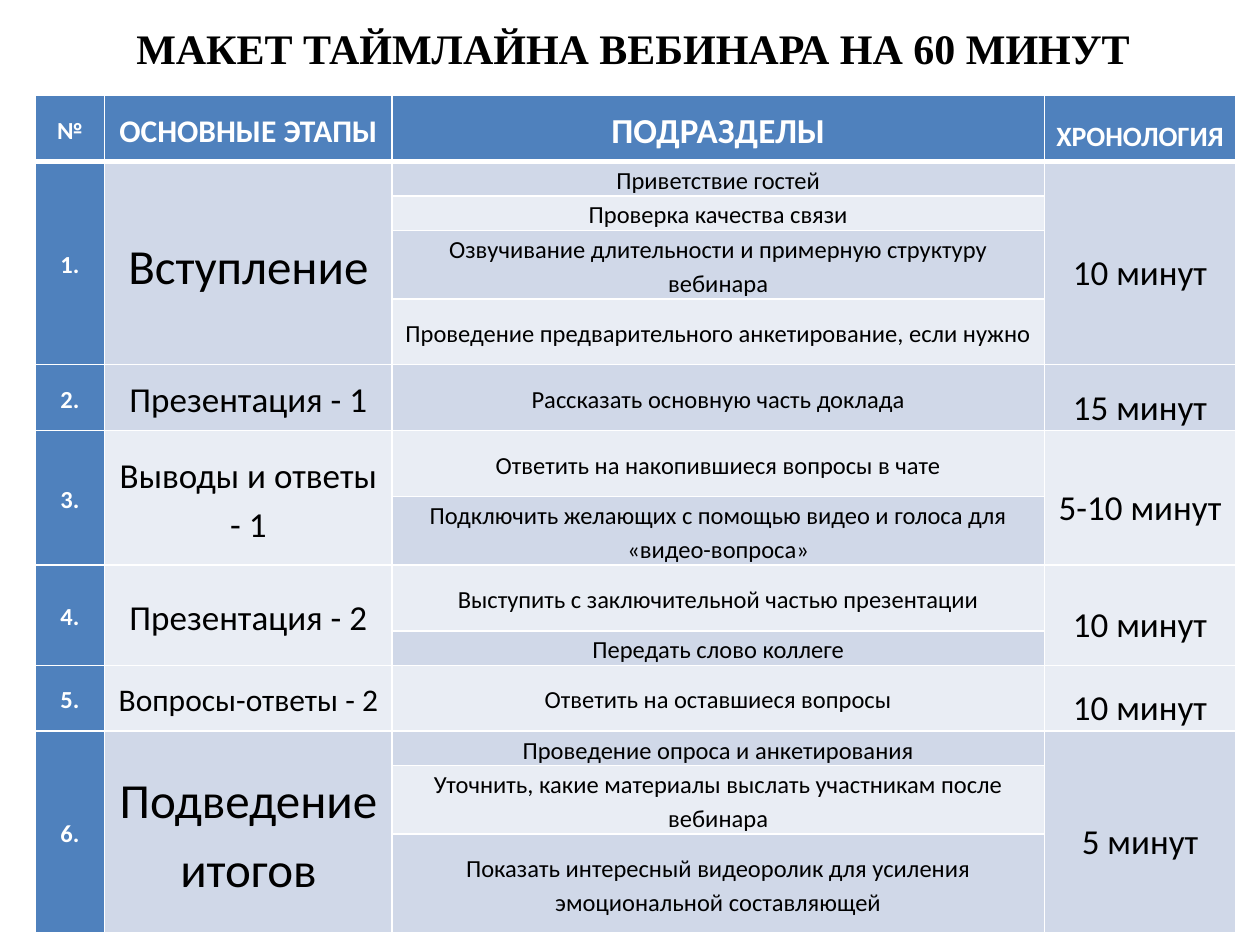
import pptx
import pptx.dml.color
import pptx.enum.text
import pptx.oxml.ns
import pptx.util
from lxml import etree

ALIGN = pptx.enum.text.PP_ALIGN.CENTER
MIDDLE = pptx.enum.text.MSO_ANCHOR.MIDDLE
WHITE, BLACK, BLUE = "FFFFFF", "000000", "4F81BD"
BANDS = ("E9EDF4", "D0D8E8")
COLUMNS = (0.55, 2.28, 5.17, 1.52)
SPACINGS = (1.15, 1.15, 1.15, 1.5)
HEADERS = (("№", 14), ("ОСНОВНЫЕ ЭТАПЫ", 18), ("ПОДРАЗДЕЛЫ", 20), ("ХРОНОЛОГИЯ", 16))
HEADER_UNITS = 2
STAGES = (
    ("Вступление", 28, "10 минут", (
        ("Приветствие гостей", 1),
        ("Проверка качества связи", 1),
        ("Озвучивание длительности и примерную структуру вебинара", 2),
        ("Проведение предварительного анкетирование, если нужно", 2))),
    ("Презентация - 1", 20, "15 минут", (
        ("Рассказать основную часть доклада", 2),)),
    ("Выводы и ответы - 1", 20, "5-10 минут", (
        ("Ответить на накопившиеся вопросы в чате", 2),
        ("Подключить желающих с помощью видео и голоса для «видео-вопроса»", 2))),
    ("Презентация - 2", 20, "10 минут", (
        ("Выступить с заключительной частью презентации", 2),
        ("Передать слово коллеге", 1))),
    ("Вопросы-ответы - 2", 18, "10 минут", (
        ("Ответить на оставшиеся вопросы", 2),)),
    ("Подведение итогов", 28, "5 минут", (
        ("Проведение опроса и анкетирования", 1),
        ("Уточнить, какие материалы выслать участникам после вебинара", 2),
        ("Показать интересный видеоролик для усиления эмоциональной составляющей", 3))),
)


def rgb(value):
    """Return the colour for a hex string."""
    return pptx.dml.color.RGBColor.from_string(value)


def format_text(tf, size, font, color, bold, spacing=None):
    """Centre the text of a frame and set its font."""
    for p in tf.paragraphs:
        p.alignment = ALIGN
        p.line_spacing = spacing
        for r in p.runs:
            r.font.size = pptx.util.Pt(size)
            r.font.name = font
            r.font.bold = bold
            r.font.color.rgb = rgb(color)


def style_cell(cell, fill, top=1, bottom=1):
    """Give a cell its white borders, fill, margins and anchor."""
    props = cell._tc.get_or_add_tcPr()
    for side, width in (("L", 1), ("R", 1), ("T", top), ("B", bottom)):
        line = etree.SubElement(props, pptx.oxml.ns.qn(f"a:ln{side}"), w=str(pptx.util.Pt(width)))
        solid = etree.SubElement(line, pptx.oxml.ns.qn("a:solidFill"))
        etree.SubElement(solid, pptx.oxml.ns.qn("a:srgbClr"), val=WHITE)
    cell.fill.solid()
    cell.fill.fore_color.rgb = rgb(fill)
    cell.margin_left = cell.margin_right = pptx.util.Inches(0.06)
    cell.margin_top = cell.margin_bottom = 0
    cell.vertical_anchor = MIDDLE


def write_cell(table, row, col, text, size, color=BLACK, bold=False):
    """Write formatted text into one cell."""
    tf = table.cell(row, col).text_frame
    tf.text = text
    format_text(tf, size, "Calibri", color, bold, SPACINGS[col])


def add_title(slide, text, left, top, width, height):
    """Place the title in the given box."""
    sp = slide.shapes.title
    sp.left, sp.top, sp.width, sp.height = left, top, width, height
    tf = sp.text_frame
    tf.text = text
    tf.word_wrap = True
    tf.auto_size = pptx.enum.text.MSO_AUTO_SIZE.NONE
    tf.vertical_anchor = MIDDLE
    format_text(tf, 24, "Times New Roman", BLACK, True)


def add_timeline(slide, left, top, width, height):
    """Build the timeline table in the given box."""
    units = [HEADER_UNITS] + [n for stage in STAGES for _, n in stage[3]]
    table = slide.shapes.add_table(len(units), len(COLUMNS), left, top, width, height).table
    for column, share in zip(table.columns, COLUMNS):
        column.width = int(width * share / sum(COLUMNS))
    for row, n in zip(table.rows, units):
        row.height = int(height * n / sum(units))

    for col, (text, size) in enumerate(HEADERS):
        style_cell(table.cell(0, col), BLUE, bottom=3)
        write_cell(table, 0, col, text, size, WHITE, True)

    first = 1
    for number, (name, size, duration, parts) in enumerate(STAGES, 1):
        last = first + len(parts) - 1
        for row, (part, _) in enumerate(parts, first):
            for col in range(len(COLUMNS)):
                fill = BLUE if col == 0 else BANDS[(row if col == 2 else first) % 2]
                style_cell(table.cell(row, col), fill, top=3 if row == 1 else 1)
            write_cell(table, row, 2, part, 14)
        if last > first:
            for col in (0, 1, 3):
                table.cell(first, col).merge(table.cell(last, col))
        write_cell(table, first, 0, f"{number}.", 14, WHITE, True)
        write_cell(table, first, 1, name, size)
        write_cell(table, first, 3, duration, 20)
        first = last + 1


def main():
    """Build and save the slide."""
    prs = pptx.Presentation()
    prs.slide_width = pptx.util.Inches(10)
    prs.slide_height = pptx.util.Inches(7.5)
    slide = prs.slides.add_slide(prs.slide_layouts[5])
    inches = pptx.util.Inches
    add_title(slide, "МАКЕТ ТАЙМЛАЙНА ВЕБИНАРА НА 60 МИНУТ",
              inches(0.26), inches(0.13), inches(9.53), inches(0.5))
    add_timeline(slide, inches(0.28), inches(0.76), inches(9.53), inches(6.54))
    prs.save("out.pptx")


if __name__ == "__main__":
    main()
